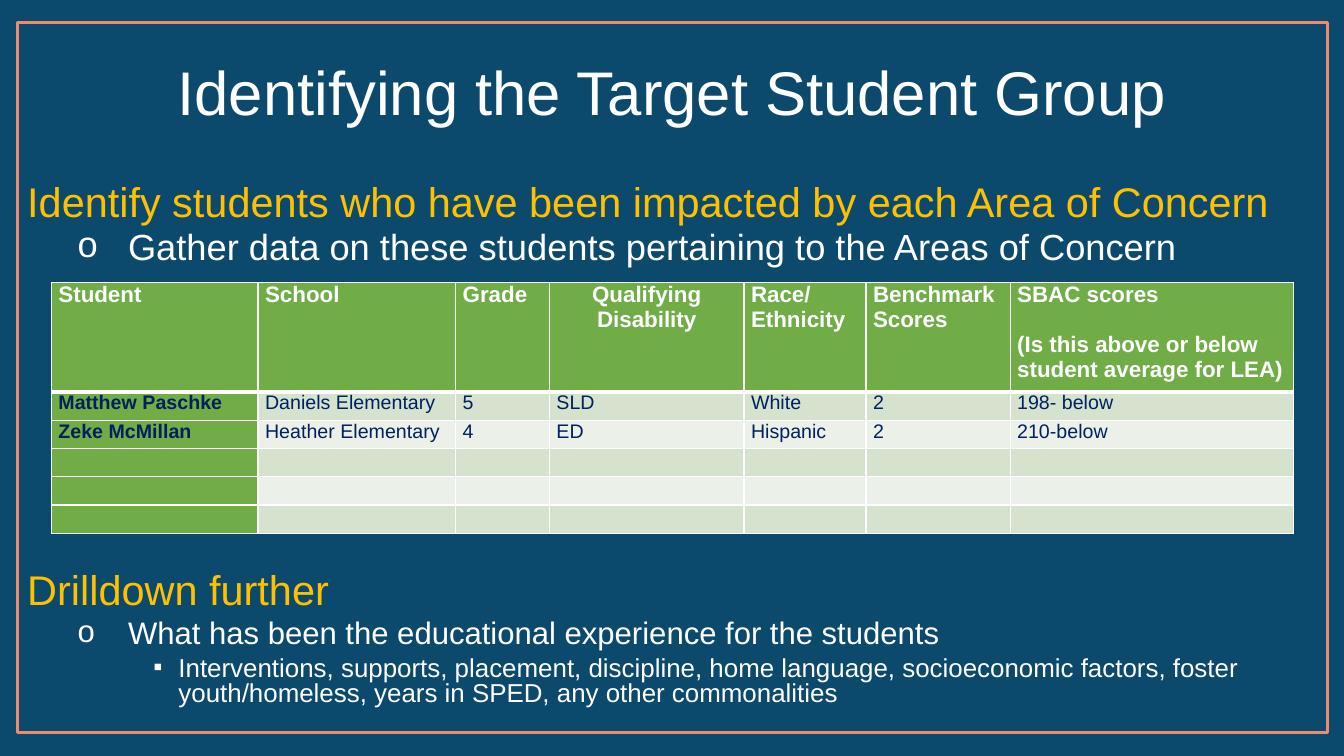
import dataclasses
import typing

import lxml.etree
import pptx
import pptx.dml.color
import pptx.enum.shapes
import pptx.enum.text
import pptx.oxml.ns
import pptx.util

Inches = pptx.util.Inches
Pt = pptx.util.Pt
qn = pptx.oxml.ns.qn

FONT = "Arial"
COLORS = {
    "background": "0C4A6D",
    "frame": "ED8B6F",
    "white": "FFFFFF",
    "gold": "FFC000",
    "navy": "002060",
    "green": "70AD47",
    "dark band": "D4E2CE",
    "light band": "EBF1E8",
}


@dataclasses.dataclass(frozen=True)
class OutlineItem:
    text: str
    size: float
    color: str = "white"
    level: int = 0
    bullet: str = ""
    margin: float = 0
    hanging: float = 0
    space_before: float = 5


@dataclasses.dataclass(frozen=True)
class Column:
    heading: str
    width: float
    values: tuple[str, ...]
    centered: bool = False


OUTLINE = [
    OutlineItem("Identify students who have been impacted by each Area of Concern",
                29.6, "gold", space_before=0),
    OutlineItem("Gather data on these students pertaining to the Areas of Concern",
                25.9, level=1, bullet="o", margin=1, hanging=0.5),
    OutlineItem("Drilldown further", 29.6, "gold", space_before=219),
    OutlineItem("What has been the educational experience for the students",
                22.2, level=1, bullet="o", margin=1, hanging=0.5),
    OutlineItem("Interventions, supports, placement, discipline, home language, "
                "socioeconomic factors, foster youth/homeless, years in SPED, "
                "any other commonalities",
                18.5, level=2, bullet="▪", margin=1.5, hanging=0.25),
]

COLUMNS = [
    Column("Student", 2.05, ("Matthew Paschke", "Zeke McMillan")),
    Column("School", 1.96, ("Daniels Elementary", "Heather Elementary")),
    Column("Grade", 0.93, ("5", "4")),
    Column("Qualifying Disability", 1.93, ("SLD", "ED"), centered=True),
    Column("Race/ Ethnicity", 1.21, ("White", "Hispanic")),
    Column("Benchmark Scores", 1.43, ("2", "2")),
    Column("SBAC scores\n(Is this above or below student average for LEA)", 2.81,
           ("198- below", "210-below")),
]
HEADER_HEIGHT = 1.09
ROW_HEIGHT = 0.28
STUDENT_ROWS = 5


def rgb(name: str) -> pptx.dml.color.RGBColor:
    return pptx.dml.color.RGBColor.from_string(COLORS[name])


def set_font(para: typing.Any, size: float, color: str, bold: bool = False) -> None:
    para.font.name = FONT
    para.font.size = Pt(size)
    para.font.bold = bold
    para.font.color.rgb = rgb(color)


def place(shape: typing.Any, left: float, top: float, width: float, height: float) -> None:
    shape.left, shape.top = Inches(left), Inches(top)
    shape.width, shape.height = Inches(width), Inches(height)


def set_bullet(para: typing.Any, item: OutlineItem) -> None:
    """Set the indents and the bullet, or switch the inherited bullet off."""
    properties = para._p.get_or_add_pPr()
    properties.set("marL", str(Inches(item.margin)))
    properties.set("indent", str(-Inches(item.hanging)))
    if not item.bullet:
        lxml.etree.SubElement(properties, qn("a:buNone"))
        return
    color = lxml.etree.SubElement(properties, qn("a:buClr"))
    lxml.etree.SubElement(color, qn("a:srgbClr"), val=COLORS["white"])
    lxml.etree.SubElement(properties, qn("a:buFont"), typeface=FONT)
    lxml.etree.SubElement(properties, qn("a:buChar"), char=item.bullet)


def set_borders(cell: typing.Any, widths: dict[str, float]) -> None:
    properties = cell._tc.get_or_add_tcPr()
    for side, width in widths.items():
        line = lxml.etree.SubElement(properties, qn(f"a:ln{side}"), w=str(Pt(width)))
        fill = lxml.etree.SubElement(line, qn("a:solidFill"))
        lxml.etree.SubElement(fill, qn("a:srgbClr"), val=COLORS["white"])


def add_frame(slide: typing.Any) -> None:
    frame = slide.shapes.add_shape(
        pptx.enum.shapes.MSO_SHAPE.RECTANGLE,
        Inches(0.17), Inches(0.22), Inches(13), Inches(7.05))
    frame.shadow.inherit = False
    frame.fill.background()
    frame.line.color.rgb = rgb("frame")
    frame.line.width = Pt(2)


def fill_title(title: typing.Any) -> None:
    place(title, 0.17, 0.22, 13, 1.45)
    title.text_frame.text = "Identifying the Target Student Group"
    title.text_frame.auto_size = pptx.enum.text.MSO_AUTO_SIZE.NONE
    title.text_frame.vertical_anchor = pptx.enum.text.MSO_ANCHOR.MIDDLE
    para = title.text_frame.paragraphs[0]
    para.alignment = pptx.enum.text.PP_ALIGN.CENTER
    para.line_spacing = 0.9
    set_font(para, 44, "white")


def fill_outline(body: typing.Any) -> None:
    place(body, 0.17, 1.79, 13, 5.49)
    frame = body.text_frame
    frame.text = "\n".join(item.text for item in OUTLINE)
    frame.auto_size = pptx.enum.text.MSO_AUTO_SIZE.NONE
    for para, item in zip(frame.paragraphs, OUTLINE):
        para.level = item.level
        para.line_spacing = 0.8
        para.space_before = Pt(item.space_before)
        set_bullet(para, item)
        set_font(para, item.size, item.color)


def cell_fill(row: int, column: int) -> str:
    if row == 0 or column == 0:
        return "green"
    return "dark band" if row % 2 else "light band"


def fill_cell(cell: typing.Any, text: str, row: int, column: int) -> None:
    header_edge = 3
    set_borders(cell, {"L": 1, "R": 1,
                       "T": header_edge if row == 1 else 1,
                       "B": header_edge if row == 0 else 1})
    cell.fill.solid()
    cell.fill.fore_color.rgb = rgb(cell_fill(row, column))
    cell.margin_left = cell.margin_right = Inches(0.07)
    cell.margin_top = cell.margin_bottom = 0
    cell.text_frame.text = text
    for index, para in enumerate(cell.text_frame.paragraphs):
        if row == 0 and COLUMNS[column].centered:
            para.alignment = pptx.enum.text.PP_ALIGN.CENTER
        if index:
            para.space_before = Pt(18)
        set_font(para, 14 if row else 16, "navy" if row else "white",
                 bold=row == 0 or column == 0)


def add_student_table(slide: typing.Any) -> None:
    width = sum(column.width for column in COLUMNS)
    height = HEADER_HEIGHT + STUDENT_ROWS * ROW_HEIGHT
    table = slide.shapes.add_table(
        STUDENT_ROWS + 1, len(COLUMNS),
        Inches(0.51), Inches(2.8), Inches(width), Inches(height)).table
    for row in range(STUDENT_ROWS + 1):
        table.rows[row].height = Inches(ROW_HEIGHT if row else HEADER_HEIGHT)
    for index, column in enumerate(COLUMNS):
        table.columns[index].width = Inches(column.width)
        blanks = [""] * (STUDENT_ROWS - len(column.values))
        for row, text in enumerate([column.heading, *column.values, *blanks]):
            fill_cell(table.cell(row, index), text, row, index)


def main() -> None:
    deck = pptx.Presentation()
    deck.slide_width, deck.slide_height = Inches(13.33), Inches(7.5)
    slide = deck.slides.add_slide(deck.slide_layouts[1])
    slide.background.fill.solid()
    slide.background.fill.fore_color.rgb = rgb("background")
    add_frame(slide)
    fill_title(slide.shapes.title)
    fill_outline(slide.placeholders[1])
    add_student_table(slide)
    deck.save("out.pptx")


if __name__ == "__main__":
    main()
